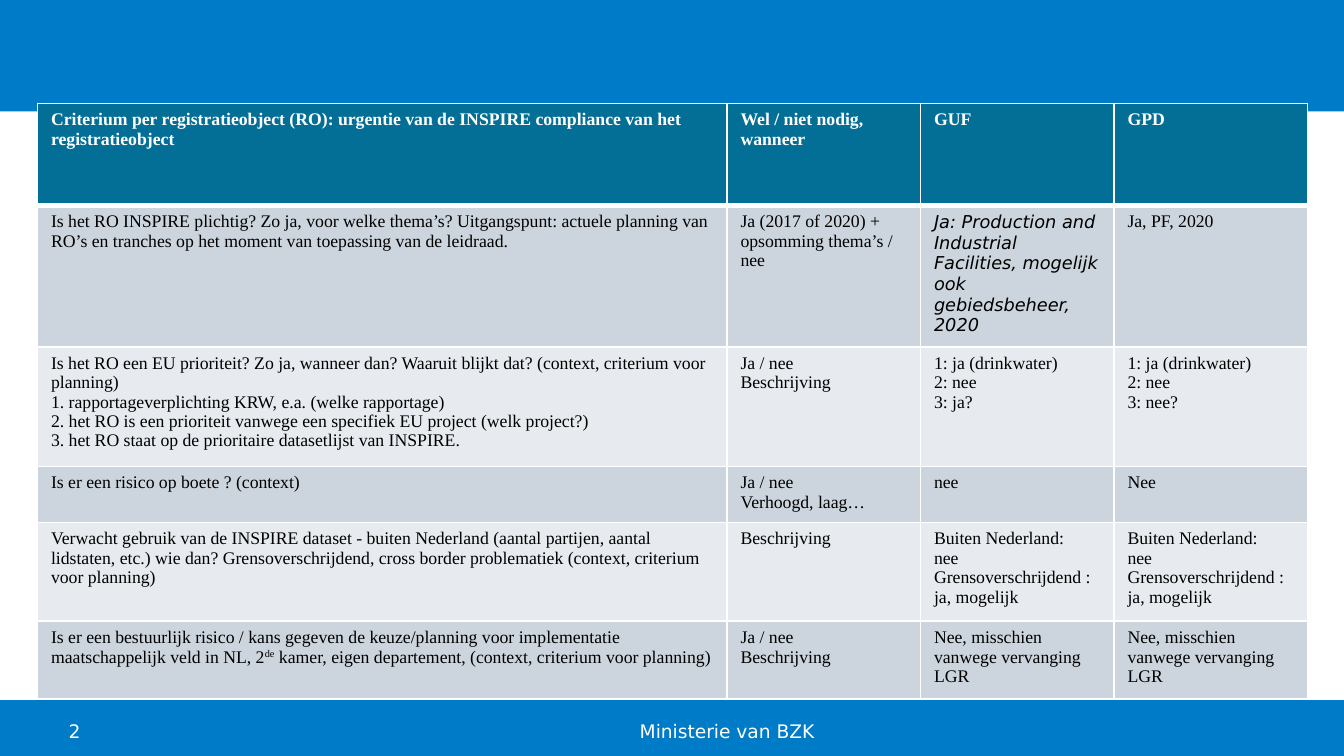
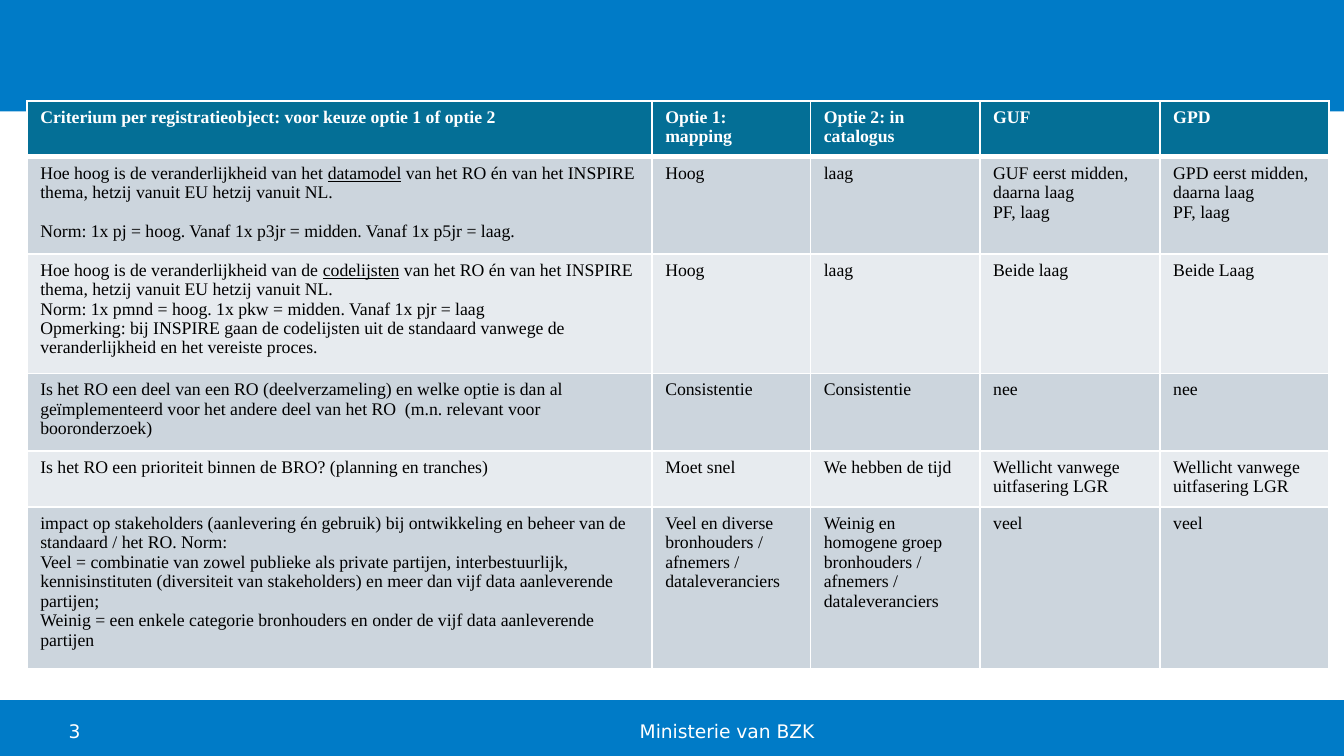
"""Build two slides with tables of criteria for INSPIRE registration objects."""
from lxml.etree import SubElement
from pptx import Presentation
from pptx.dml.color import RGBColor
from pptx.enum.shapes import MSO_SHAPE
from pptx.enum.text import MSO_ANCHOR
from pptx.oxml.ns import qn
from pptx.util import Inches, Pt

BLUE, TEAL, WHITE, BLACK = "007BC7", "046F96", "FFFFFF", "000000"
BANDS = ["E7EBEF", "CCD5DD"]
SANS, SERIF = "DejaVu Sans", "Times New Roman"
FOOTER = "Ministerie van BZK"


def paint(fill, color):
    fill.solid()
    fill.fore_color.rgb = RGBColor.from_string(color)


def write(tf, text, size=9.5, font=SERIF, color=BLACK, bold=False, italic=False,
          underline=False, raised=False, gap=0):
    """Write one paragraph a line; parts between bars are underlined or raised."""
    for n, line in enumerate(text.split("\n")):
        p = tf.add_paragraph() if n else tf.paragraphs[0]
        if n and gap:
            p.space_before = Pt(gap)
        for i, part in enumerate(line.split("|")):
            r = p.add_run()
            r.text = part
            r.font.size, r.font.name = Pt(size), font
            r.font.bold, r.font.italic = bold, italic
            paint(r.font.fill, color)
            if i % 2 and underline:
                r.font.underline = True
            if i % 2 and raised:
                r.font._element.set("baseline", "30000")


urgency = [
    ["Criterium per registratieobject (RO): urgentie van de INSPIRE compliance van het registratieobject",
     "Wel / niet nodig, wanneer", "GUF", "GPD"],
    ["Is het RO INSPIRE plichtig? Zo ja, voor welke thema’s? Uitgangspunt: actuele planning van RO’s "
     "en tranches op het moment van toepassing van de leidraad.",
     "Ja (2017 of 2020) + opsomming thema’s / nee",
     ("Ja: Production and Industrial Facilities, mogelijk ook gebiedsbeheer, 2020",
      dict(font=SANS, italic=True)),
     "Ja, PF, 2020"],
    ["Is het RO een EU prioriteit? Zo ja, wanneer dan? Waaruit blijkt dat? (context, criterium voor planning)\n"
     "1. rapportageverplichting KRW, e.a. (welke rapportage)\n"
     "2. het RO is een prioriteit vanwege een specifiek EU project (welk project?)\n"
     "3. het RO staat op de prioritaire datasetlijst van INSPIRE.",
     "Ja / nee\nBeschrijving",
     "1: ja (drinkwater)\n2: nee\n3: ja?",
     "1: ja (drinkwater)\n2: nee\n3: nee?"],
    ["Is er een risico op boete ? (context)", "Ja / nee\nVerhoogd, laag…", "nee", "Nee"],
    ["Verwacht gebruik van de INSPIRE dataset - buiten Nederland (aantal partijen, aantal lidstaten, etc.) "
     "wie dan? Grensoverschrijdend, cross border problematiek (context, criterium voor planning)",
     "Beschrijving"] + ["Buiten Nederland:\nnee\nGrensoverschrijdend : ja, mogelijk"] * 2,
    [("Is er een bestuurlijk risico / kans gegeven de keuze/planning voor implementatie maatschappelijk "
      "veld in NL, 2|de| kamer, eigen departement, (context, criterium voor planning)", dict(raised=True)),
     "Ja / nee\nBeschrijving"] + ["Nee, misschien vanwege vervanging LGR"] * 2,
]

options = [
    ["Criterium per registratieobject: voor keuze optie 1 of optie 2",
     "Optie 1: mapping", "Optie 2: in catalogus", "GUF", "GPD"],
    [("Hoe hoog is de veranderlijkheid van het |datamodel| van het RO én van het INSPIRE thema, "
      "hetzij vanuit EU hetzij vanuit NL.\n"
      "Norm: 1x pj = hoog. Vanaf 1x p3jr = midden. Vanaf 1x p5jr = laag.",
      dict(underline=True, gap=10.5)),
     "Hoog", "laag",
     "GUF eerst midden, daarna laag\nPF, laag",
     "GPD eerst midden, daarna laag\nPF, laag"],
    [("Hoe hoog is de veranderlijkheid van de |codelijsten| van het RO én van het INSPIRE thema, "
      "hetzij vanuit EU hetzij vanuit NL.\n"
      "Norm: 1x pmnd = hoog. 1x pkw = midden. Vanaf 1x pjr = laag\n"
      "Opmerking: bij INSPIRE gaan de codelijsten uit de standaard vanwege de veranderlijkheid "
      "en het vereiste proces.", dict(underline=True)),
     "Hoog", "laag", "Beide laag", "Beide Laag"],
    ["Is het RO een deel van een RO (deelverzameling) en welke optie is dan al geïmplementeerd "
     "voor het andere deel van het RO  (m.n. relevant voor booronderzoek)",
     "Consistentie", "Consistentie", "nee", "nee"],
    ["Is het RO een prioriteit binnen de BRO? (planning en tranches)",
     "Moet snel", "We hebben de tijd"] + ["Wellicht vanwege uitfasering LGR"] * 2,
    ["impact op stakeholders (aanlevering én gebruik) bij ontwikkeling en beheer van de standaard / "
     "het RO. Norm:\n"
     "Veel = combinatie van zowel publieke als private partijen, interbestuurlijk, kennisinstituten "
     "(diversiteit van stakeholders) en meer dan vijf data aanleverende partijen;\n"
     "Weinig = een enkele categorie bronhouders en onder de vijf data aanleverende partijen",
     "Veel en diverse bronhouders / afnemers / dataleveranciers",
     "Weinig en homogene groep bronhouders / afnemers / dataleveranciers",
     "veel", "veel"],
]

slides = [
    (2, urgency, 0.28, 0.77, 0.76, [5.13, 1.44, 1.44, 1.44]),
    (3, options, 0.2, 0.75, 0.21, [4.65, 1.18, 1.26, 1.34, 1.26]),
]

prs = Presentation()
prs.slide_width = Inches(10)
prs.slide_height = prs.slide_width * 9 // 16

for number, rows, left, top, header_height, widths in slides:
    s = prs.slides.add_slide(prs.slide_layouts[6])

    for y, h in [(0, 0.83), (5.21, 0.42)]:
        sp = s.shapes.add_shape(MSO_SHAPE.RECTANGLE, 0, Inches(y), prs.slide_width, Inches(h))
        sp.shadow.inherit = False
        paint(sp.fill, BLUE)
        sp.line.fill.background()

    for text, x, y, w, h in [(str(number), 0.51, 5.33, 2.08, 0.19), (FOOTER, 4.76, 5.35, 3.39, 0.17)]:
        tf = s.shapes.add_textbox(Inches(x), Inches(y), Inches(w), Inches(h)).text_frame
        tf.margin_left = tf.margin_right = tf.margin_top = tf.margin_bottom = 0
        tf.word_wrap = True
        tf.vertical_anchor = MSO_ANCHOR.BOTTOM
        write(tf, text, size=10, font=SANS, color=WHITE)

    heights = [header_height] + [0.41] * (len(rows) - 1)
    table = s.shapes.add_table(len(rows), len(widths), Inches(left), Inches(top),
                               Inches(sum(widths)), Inches(sum(heights))).table
    for column, width in zip(table.columns, widths):
        column.width = Inches(width)
    for i, row in enumerate(rows):
        table.rows[i].height = Inches(heights[i])
        for j, content in enumerate(row):
            cell = table.cell(i, j)
            text, fmt = content if isinstance(content, tuple) else (content, {})
            if i == 0:
                fmt = dict(color=WHITE, bold=True)
            write(cell.text_frame, text, **fmt)
            tcPr = cell._tc.get_or_add_tcPr()
            for side in "LRTB":
                thick = (i, side) in [(0, "B"), (1, "T")]
                ln = SubElement(tcPr, qn("a:ln" + side), w=str(Pt(3 if thick else 1)))
                SubElement(SubElement(ln, qn("a:solidFill")), qn("a:srgbClr"), val=WHITE)
            paint(cell.fill, BANDS[i % 2] if i else TEAL)

prs.save("out.pptx")
